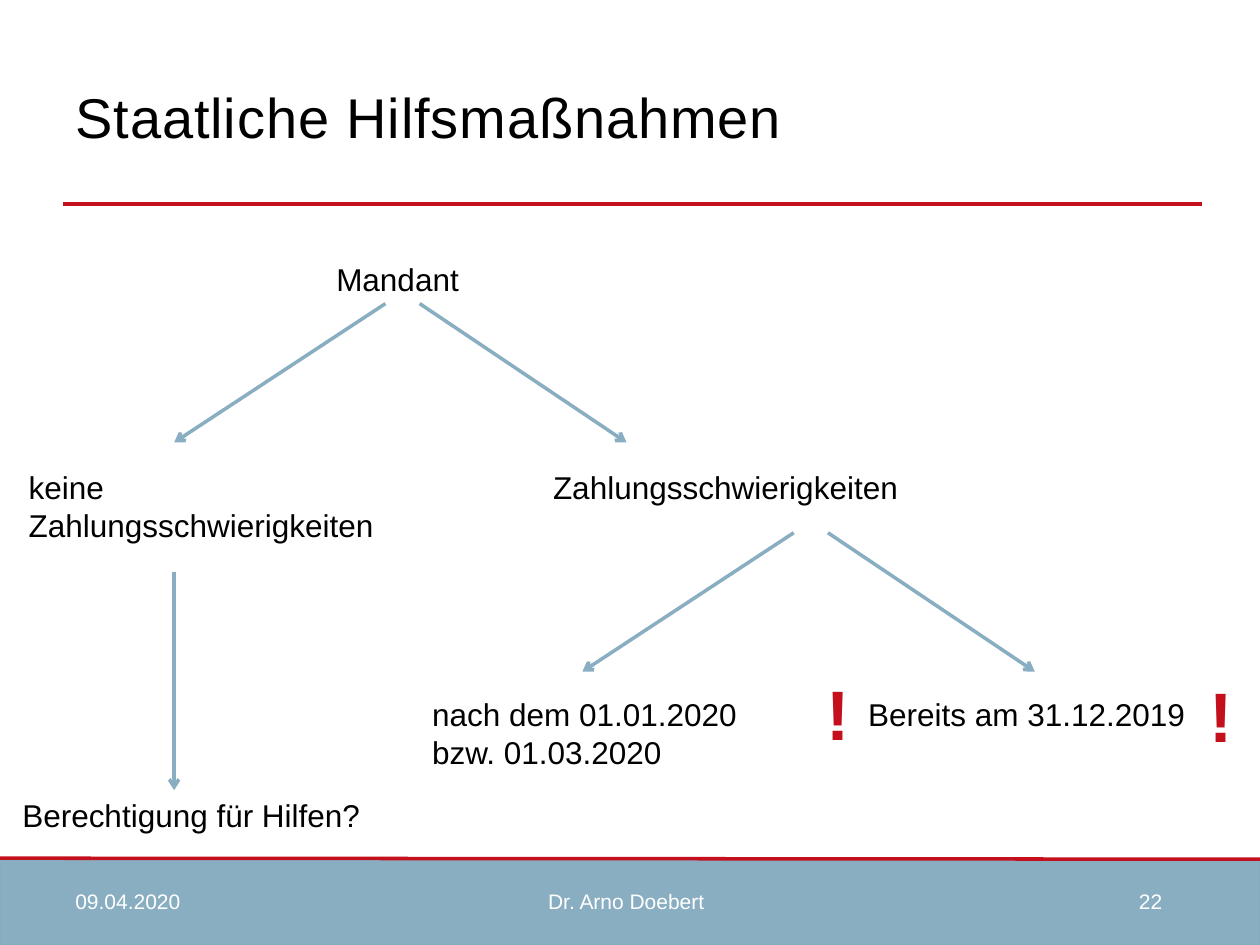
from lxml import etree
from pptx import Presentation
from pptx.dml.color import RGBColor
from pptx.enum.shapes import MSO_CONNECTOR, MSO_SHAPE
from pptx.enum.text import MSO_ANCHOR, MSO_AUTO_SIZE, PP_ALIGN
from pptx.oxml.ns import qn
from pptx.util import Cm, Pt

BLUE, RED, BLACK, WHITE = "8AAEC1", "C3101C", "000000", "FFFFFF"
LINE_H = 1.02  # height of a one-line text box


def rgb(value):
    return RGBColor.from_string(value)


class Deck:
    font = "Arial"

    def __init__(self, width, height):
        self.prs = Presentation()
        self.prs.slide_width, self.prs.slide_height = Cm(width), Cm(height)
        self.s = self.prs.slides.add_slide(self.prs.slide_layouts[5])

    def style(self, p, size, color, bold=False, align=PP_ALIGN.LEFT):
        p.alignment = align
        p.font.name, p.font.size, p.font.bold = self.font, Pt(size), bold
        p.font.color.rgb = rgb(color)

    def title(self, text, x, y, w, h):
        sp = self.s.shapes.title
        sp.left, sp.top, sp.width, sp.height = Cm(x), Cm(y), Cm(w), Cm(h)
        tf = sp.text_frame
        tf.text = text
        tf.auto_size = MSO_AUTO_SIZE.NONE
        tf.vertical_anchor = MSO_ANCHOR.MIDDLE
        p = tf.paragraphs[0]
        self.style(p, 32, BLACK)
        p.runs[0].font._element.set("spc", "50")

    def text(self, text, x, y, w, h=LINE_H, size=18, color=BLACK, bold=False,
             align=PP_ALIGN.LEFT, anchor=MSO_ANCHOR.TOP, wrap=False):
        tf = self.s.shapes.add_textbox(Cm(x), Cm(y), Cm(w), Cm(h)).text_frame
        tf.text = text
        tf.word_wrap = wrap
        tf.vertical_anchor = anchor
        self.style(tf.paragraphs[0], size, color, bold, align)

    def footer(self, text, x, w, align=PP_ALIGN.LEFT):
        self.text(text, x, 17.65, w, size=12, color=WHITE, align=align,
                  anchor=MSO_ANCHOR.MIDDLE, wrap=True)

    def band(self, x, y, w, h):
        sp = self.s.shapes.add_shape(MSO_SHAPE.RECTANGLE, Cm(x), Cm(y), Cm(w), Cm(h))
        sp.shadow.inherit = False
        sp.fill.solid()
        sp.fill.fore_color.rgb = rgb(BLUE)
        sp.line.color.rgb = rgb("86ABBE")
        sp.line.width = Pt(0.75)

    def line(self, x1, y1, x2, y2, color=RED):
        c = self.s.shapes.add_connector(MSO_CONNECTOR.STRAIGHT,
                                        Cm(x1), Cm(y1), Cm(x2), Cm(y2))
        c.line.color.rgb = rgb(color)
        c.line.width = Pt(2)
        etree.SubElement(c._element.spPr, qn("a:effectLst"))
        return c

    def arrow(self, x1, y1, x2, y2):
        c = self.line(x1, y1, x2, y2, BLUE)
        etree.SubElement(c.line._get_or_add_ln(), qn("a:tailEnd"), type="arrow")

    def fork(self, x, y):
        """Two arrows that spread downwards from a node."""
        self.arrow(x, y, x - 4.26, y + 2.8)
        self.arrow(x + 0.69, y, x + 4.86, y + 2.8)

    def warning(self, x, y):
        self.text("!", x, y, 0.99, 1.96, size=40, color=RED, bold=True)


def main():
    d = Deck(25.4, 19.05)

    # Frame and title
    d.band(0, 17.32, 25.4, 1.73)
    d.line(1.27, 4.11, 24.23, 4.11)
    d.line(0, 17.3, 25.4, 17.32)
    d.title("Staatliche Hilfsmaßnahmen", 1.27, 0.76, 22.96, 3.18)

    # Footer
    d.footer("09.04.2020", 1.27, 3.23)
    d.footer("Dr. Arno Doebert", 8.03, 9.19, PP_ALIGN.CENTER)
    d.footer("22", 22.71, 1.42)

    # First decision
    d.text("Mandant", 6.53, 5.11, 3)
    d.fork(7.77, 6.12)

    # Left branch
    d.text("keine Zahlungsschwierigkeiten", 0.33, 9.32, 7.75, 1.8, wrap=True)
    d.arrow(3.51, 11.53, 3.51, 15.93)
    d.text("Berechtigung für Hilfen?", 0.2, 15.93, 7.39)

    # Right branch
    d.text("Zahlungsschwierigkeiten", 10.9, 9.32, 7.52)
    d.fork(16, 10.74)
    d.text("nach dem 01.01.2020 bzw. 01.03.2020", 8.46, 13.89, 7.87, 1.8, wrap=True)
    d.text("Bereits am 31.12.2019", 17.25, 13.89, 6.96)
    d.warning(16.41, 13.39)
    d.warning(24.13, 13.44)

    d.prs.save("out.pptx")


if __name__ == "__main__":
    main()
